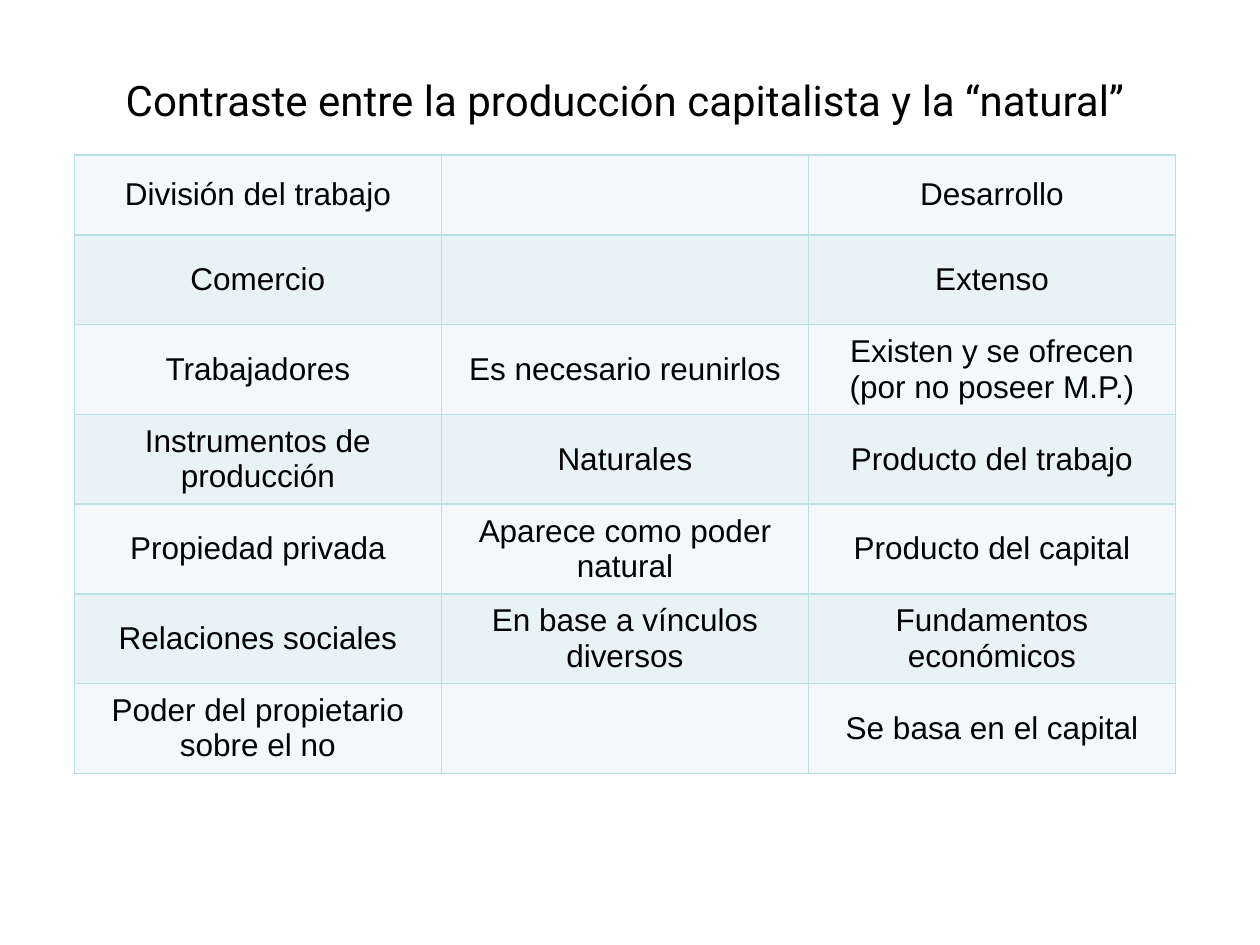
import dataclasses

import lxml.etree
import pptx
import pptx.dml.color
import pptx.enum.text
import pptx.oxml.ns
import pptx.util

Pt = pptx.util.Pt
BORDER_COLOR = "BBE0E3"
BAND_COLORS = ("F3F9FA", "E7F3F4")
COLUMN_WIDTH = 209.76
FIRST_ROW_HEIGHT, ROW_HEIGHT = 45.6, 51.3


@dataclasses.dataclass(frozen=True)
class ContrastRow:
    aspect: str
    natural: str
    capitalist: str


CONTRAST_ROWS = [
    ContrastRow("División del trabajo", "", "Desarrollo"),
    ContrastRow("Comercio", "", "Extenso"),
    ContrastRow("Trabajadores", "Es necesario reunirlos",
                "Existen y se ofrecen (por no poseer M.P.)"),
    ContrastRow("Instrumentos de producción", "Naturales", "Producto del trabajo"),
    ContrastRow("Propiedad privada", "Aparece como poder natural", "Producto del capital"),
    ContrastRow("Relaciones sociales", "En base a vínculos diversos",
                "Fundamentos económicos"),
    ContrastRow("Poder del propietario sobre el no", "", "Se basa en el capital"),
]


def color(hex_code: str) -> pptx.dml.color.RGBColor:
    return pptx.dml.color.RGBColor.from_string(hex_code)


def write_text(text_frame, text: str, *, size: float, font: str = "Arial",
               hex_code: str = "000000") -> None:
    """Write one centred paragraph."""
    text_frame.word_wrap = True
    paragraph = text_frame.paragraphs[0]
    paragraph.alignment = pptx.enum.text.PP_ALIGN.CENTER
    paragraph.font.size = Pt(size)
    if text:
        run = paragraph.add_run()
        run.text = text
        run.font.size = Pt(size)
        run.font.name = font
        run.font.color.rgb = color(hex_code)


def add_borders(cell, hex_code: str, width: float) -> None:
    """Outline all four sides; the lines must come before the cell fill."""
    qualified = pptx.oxml.ns.qn
    properties = cell._tc.get_or_add_tcPr()
    for side in ("a:lnL", "a:lnR", "a:lnT", "a:lnB"):
        line = lxml.etree.SubElement(properties, qualified(side), w=str(Pt(width)))
        fill = lxml.etree.SubElement(line, qualified("a:solidFill"))
        lxml.etree.SubElement(fill, qualified("a:srgbClr"), val=hex_code)


def format_cell(cell, text: str, fill_color: str) -> None:
    add_borders(cell, BORDER_COLOR, 1)
    cell.fill.solid()
    cell.fill.fore_color.rgb = color(fill_color)
    cell.vertical_anchor = pptx.enum.text.MSO_ANCHOR.MIDDLE
    write_text(cell.text_frame, text, size=18)


def add_title(slide, text: str) -> None:
    title = slide.shapes.title
    title.left, title.top, title.width, title.height = Pt(31), Pt(37.4), Pt(652.3), Pt(39.6)
    title.text_frame.auto_size = pptx.enum.text.MSO_AUTO_SIZE.NONE
    title.text_frame.vertical_anchor = pptx.enum.text.MSO_ANCHOR.MIDDLE
    write_text(title.text_frame, text, size=24, font="Roboto")


def add_contrast_table(slide, rows: list[ContrastRow]) -> None:
    column_count = len(dataclasses.fields(ContrastRow))
    table = slide.shapes.add_table(
        len(rows), column_count, Pt(42.5), Pt(88.6), Pt(COLUMN_WIDTH * column_count),
        Pt(FIRST_ROW_HEIGHT + ROW_HEIGHT * (len(rows) - 1))).table
    for column in table.columns:
        column.width = Pt(COLUMN_WIDTH)
    for row_index, row in enumerate(rows):
        table.rows[row_index].height = Pt(ROW_HEIGHT if row_index else FIRST_ROW_HEIGHT)
        for column_index, text in enumerate(dataclasses.astuple(row)):
            format_cell(table.cell(row_index, column_index), text,
                        BAND_COLORS[row_index % 2])


def main() -> None:
    presentation = pptx.Presentation()
    presentation.slide_width, presentation.slide_height = Pt(720), Pt(540)
    # Title-only layout
    slide = presentation.slides.add_slide(presentation.slide_layouts[5])
    add_title(slide, "Contraste entre la producción capitalista y la “natural”")
    add_contrast_table(slide, CONTRAST_ROWS)
    presentation.save("out.pptx")


if __name__ == "__main__":
    main()
